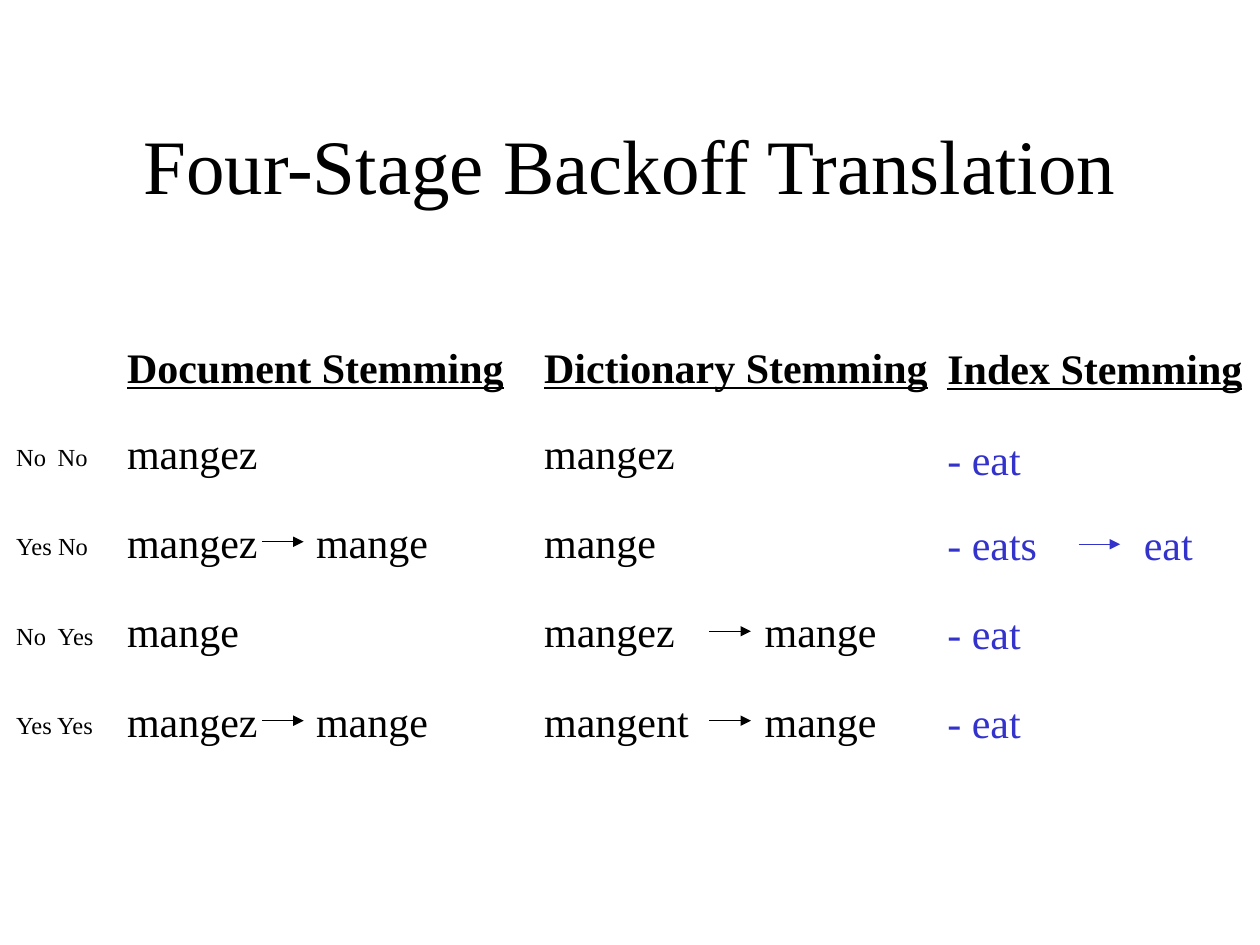
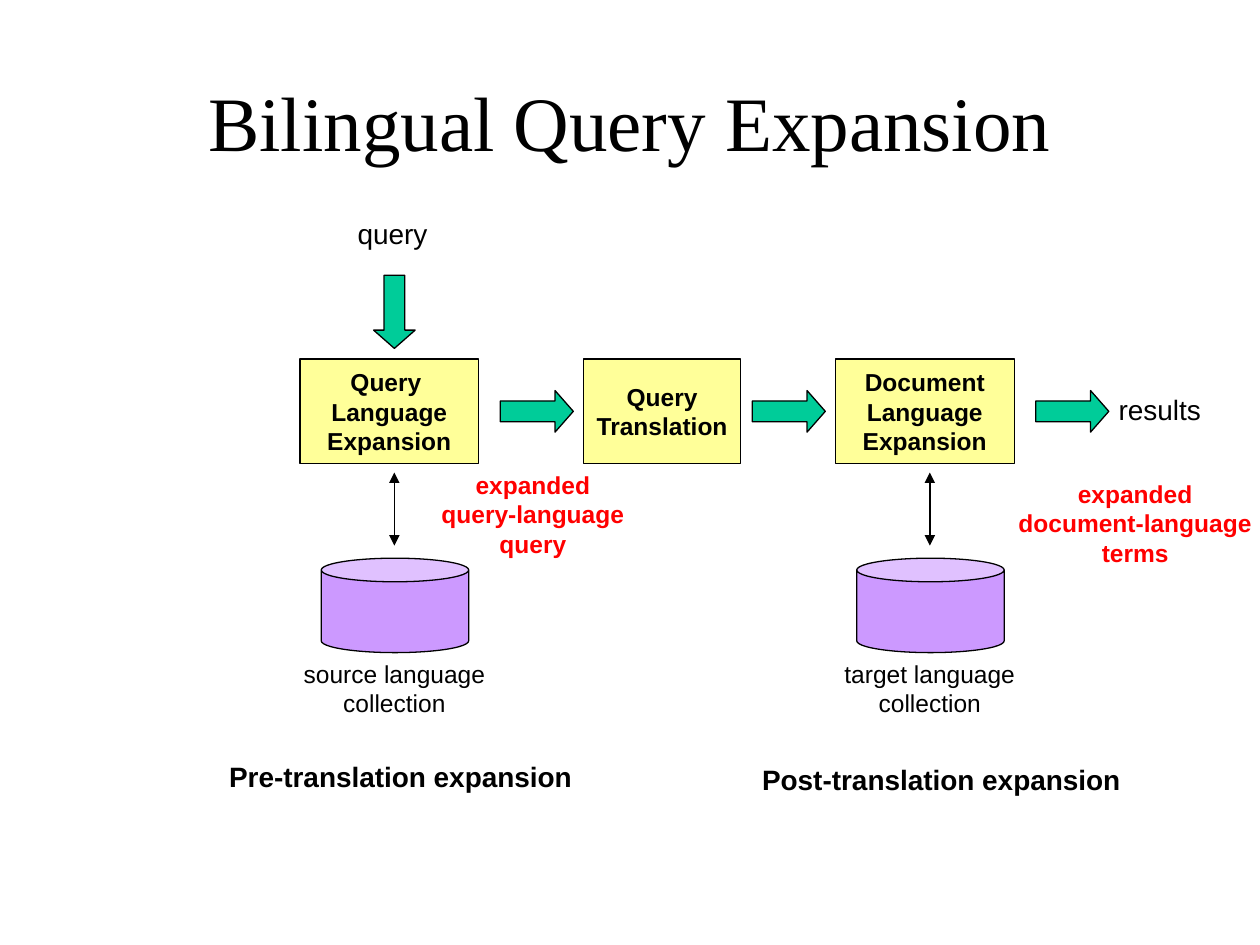
import pptx
import pptx.util
import pptx.dml.color
import pptx.enum.shapes
import pptx.enum.text
import pptx.oxml.ns
from lxml import etree

Inches = pptx.util.Inches
Pt = pptx.util.Pt
SHAPE = pptx.enum.shapes.MSO_SHAPE
ALIGN = pptx.enum.text.PP_ALIGN
ANCHOR = pptx.enum.text.MSO_ANCHOR
FIT = pptx.enum.text.MSO_AUTO_SIZE
qn = pptx.oxml.ns.qn

SERIF, SANS = "Times New Roman", "Arial"
BLACK, BLUE, RED = "000000", "3333CC", "FF0000"
YELLOW, GREEN, PURPLE = "FFFF99", "00CC99", "CC99FF"


def color(code):
    """Turn a hex string into a colour."""
    return pptx.dml.color.RGBColor.from_string(code)


def fill_text(frame, text, size=14, font=SANS, ink=BLACK, bold=False, under=False,
              center=False, middle=False, wrap=False, before=0, gap=0, tab=0):
    """Write one paragraph per line of text into a frame."""
    frame.word_wrap = wrap
    frame.vertical_anchor = ANCHOR.MIDDLE if middle else ANCHOR.TOP
    for num, line in enumerate(text.split("\n")):
        para = frame.add_paragraph() if num else frame.paragraphs[0]
        para.alignment = ALIGN.CENTER if center else ALIGN.LEFT
        para.space_before = Pt(gap if num else before)
        if tab:
            stops = etree.SubElement(para._p.get_or_add_pPr(), qn("a:tabLst"))
            etree.SubElement(stops, qn("a:tab"), pos=str(Inches(tab)), algn="l")
        run = para.add_run()
        run.text = line
        run.font.size, run.font.name = Pt(size), font
        run.font.bold, run.font.underline = bold, under
        run.font.color.rgb = color(ink)


def add_text(slide, box, text, **style):
    """Place a text box at left, top, width, height."""
    frame = slide.shapes.add_textbox(*map(Inches, box)).text_frame
    fill_text(frame, text, **style)
    frame.auto_size = FIT.NONE if style.get("middle") else FIT.SHAPE_TO_FIT_TEXT


def add_shape(slide, kind, box, paint):
    """Place a filled shape with a thin black outline."""
    shape = slide.shapes.add_shape(kind, *map(Inches, box))
    shape.shadow.inherit = False
    shape.fill.solid()
    shape.fill.fore_color.rgb = color(paint)
    shape.line.color.rgb = color(BLACK)
    shape.line.width = Pt(0.75)
    return shape


def add_line(slide, start, end, ink=BLACK, both=False):
    """Draw a thin line with one or two arrowheads."""
    kind = pptx.enum.shapes.MSO_CONNECTOR.STRAIGHT
    line = slide.shapes.add_connector(kind, *map(Inches, start + end))
    line.line.color.rgb = color(ink)
    line.line.width = Pt(0.75)
    pen = line.line._get_or_add_ln()
    for tip in ("headEnd", "tailEnd") if both else ("tailEnd",):
        etree.SubElement(pen, qn("a:" + tip), type="triangle")
    etree.SubElement(line._element.spPr, qn("a:effectLst"))


def add_title(slide, top, text):
    """Place the slide title."""
    add_text(slide, (0.75, top, 8.5, 1.25), text, size=44, font=SERIF,
             center=True, middle=True, wrap=True)


def add_column(slide, left, top, width, head, rows, tops, arrow, target, ink=BLACK):
    """Place a stemming column: a heading and words, some with a stem."""
    style = dict(size=24, font=SERIF, wrap=True, before=3)
    add_text(slide, (left, top, width, 0.5), head, bold=True, under=True, **style)
    for row, (word, stem) in zip(tops, rows):
        add_text(slide, (left, row, 1.42, 0.5), word, ink=ink, **style)
        if stem:
            mid = row + 0.25
            add_line(slide, (left + arrow, mid), (left + arrow + 0.33, mid), ink)
            add_text(slide, (left + target, row, 1.25, 0.5), stem, ink=ink, **style)


def draw_stages(slide):
    """Build the slide of four backoff stages."""
    add_title(slide, 0.67, "Four-Stage Backoff Translation")
    tops = [3.34 + 0.71 * num for num in range(4)]
    add_column(slide, 0.91, 2.66, 3.25, "Document Stemming",
               [("mangez", ""), ("mangez", "mange"), ("mange", ""), ("mangez", "mange")],
               tops, 1.17, 1.5)
    add_column(slide, 4.22, 2.66, 3.33, "Dictionary Stemming",
               [("mangez", ""), ("mange", ""), ("mangez", "mange"), ("mangent", "mange")],
               tops, 1.41, 1.75)
    add_column(slide, 7.42, 2.67, 2.62, "Index Stemming",
               [("- eat", ""), ("- eats", "eat"), ("- eat", ""), ("- eat", "")],
               (3.39, 4.07, 4.77, 5.48), 1.14, 1.56, BLUE)
    add_text(slide, (0.03, 3.46, 0.82, 2.46), "No\tNo\nYes No\nNo\tYes\nYes Yes",
             font=SERIF, gap=34.2, tab=0.33)


def add_step(slide, left, top, width, text):
    """Place a yellow step box."""
    box = add_shape(slide, SHAPE.RECTANGLE, (left, top, width, 0.83), YELLOW)
    fill_text(box.text_frame, text, bold=True, center=True, middle=True)


def add_arrow(slide, left, top, turn=0):
    """Place a green block arrow."""
    arrow = add_shape(slide, SHAPE.RIGHT_ARROW, (left, top, 0.58, 0.33), GREEN)
    arrow.adjustments[1] = 0.438
    arrow.rotation = turn


def add_branch(slide, left, top, step, store, width):
    """Place an expansion step above the collection it uses."""
    add_step(slide, left, top, 1.42, step)
    mid = left + 0.75
    add_line(slide, (mid, top + 0.9), (mid, top + 1.48), both=True)
    add_shape(slide, SHAPE.CAN, (left + 0.17, top + 1.58, 1.17, 0.75), PURPLE)
    add_text(slide, (mid - width / 2, top + 2.33, width, 0.57), store, center=True)


def draw_flow(slide):
    """Build the slide of query expansion."""
    add_title(slide, 0.33, "Bilingual Query Expansion")
    top = 2.85
    add_branch(slide, 2.38, top, "Query \nLanguage\nExpansion",
               "source language \ncollection", 1.69)
    add_step(slide, 4.63, top, 1.25, "Query\nTranslation")
    add_branch(slide, 6.63, top, "Document\nLanguage\nExpansion",
               "target language \ncollection", 1.6)
    add_arrow(slide, 2.84, 2.31, 90)
    for left in (3.97, 5.97, 8.22):
        add_arrow(slide, left, top + 0.25)
    add_text(slide, (2.74, 1.67, 0.76, 0.37), "query", size=16)
    add_text(slide, (8.78, 3.07, 0.86, 0.37), "results", size=16)
    note = dict(ink=RED, bold=True, center=True)
    add_text(slide, (3.4, 3.68, 1.66, 0.81), "expanded\nquery-language\nquery", **note)
    add_text(slide, (7.98, 3.75, 2.06, 0.81), "expanded\ndocument-language\nterms", **note)
    add_text(slide, (1.72, 5.98, 2.93, 0.37), "Pre-translation expansion", size=16, bold=True)
    add_text(slide, (5.95, 6, 3.05, 0.37), "Post-translation expansion", size=16, bold=True)


def main():
    """Build and save the deck."""
    deck = pptx.Presentation()
    deck.slide_width, deck.slide_height = Inches(10), Inches(7.5)
    for draw in (draw_stages, draw_flow):
        draw(deck.slides.add_slide(deck.slide_layouts[6]))
    deck.save("out.pptx")


if __name__ == "__main__":
    main()
